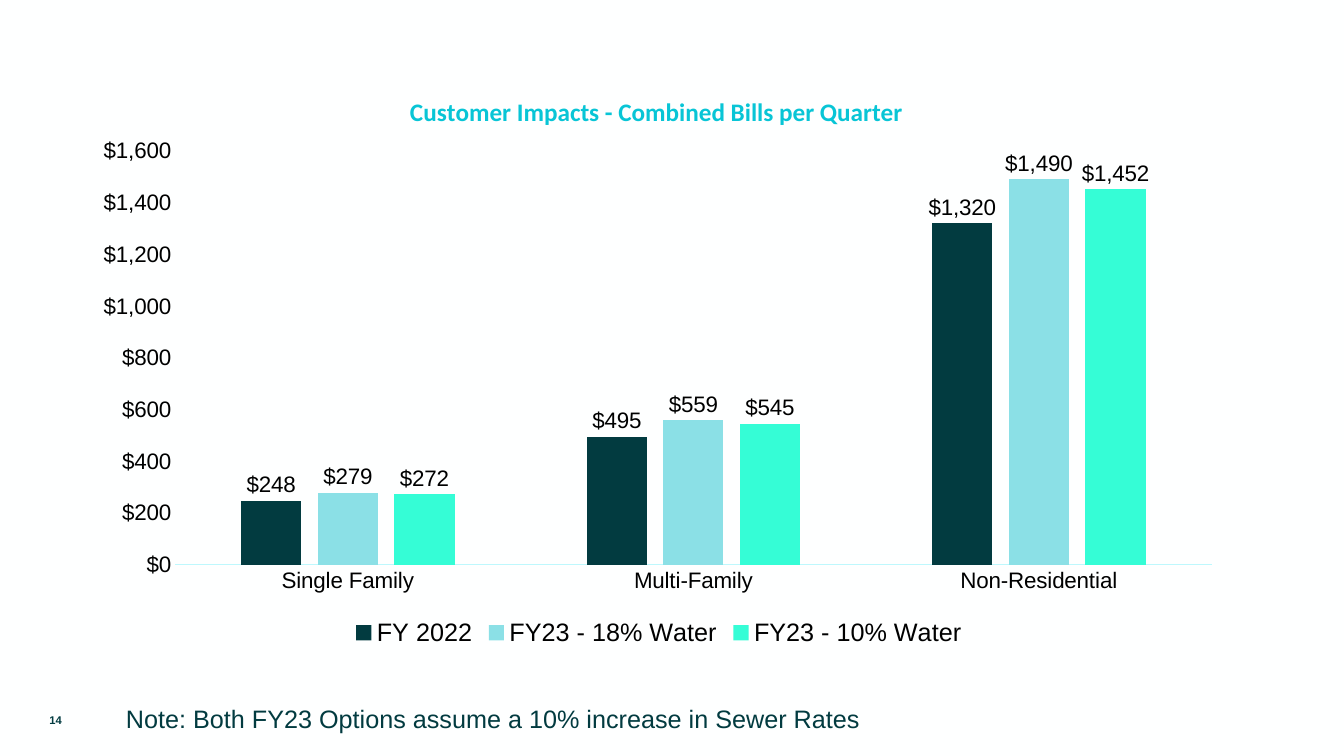
from pptx import Presentation
from pptx.chart.data import CategoryChartData
from pptx.dml.color import RGBColor
from pptx.enum.chart import (XL_CHART_TYPE as Kind, XL_LABEL_POSITION as Spot,
                             XL_LEGEND_POSITION as Side, XL_TICK_MARK as Tick)
from pptx.enum.text import MSO_ANCHOR as Anchor, PP_ALIGN as Align
from pptx.oxml import parse_xml
from pptx.oxml.ns import nsdecls
from pptx.util import Pt

PX = 9525  # 96 px to the inch
DARK, BLACK = "023B40", "000000"
MONEY = '"$"#,##0'
GROUPS = ["Single Family", "Multi-Family", "Non-Residential"]
BILLS = [
    ("FY 2022", (248, 495, 1320), DARK),
    ("FY23 - 18% Water", (279, 559, 1490), "8BE0E6"),
    ("FY23 - 10% Water", (272, 545, 1452), "35FDD6"),
]


def box(*sizes):
    return [size * PX for size in sizes]


def paint(fill, color):
    fill.solid()
    fill.fore_color.rgb = RGBColor.from_string(color)


def style(font, size, color=BLACK, name="Arial", bold=False):
    font.size, font.name, font.bold = Pt(size), name, bold
    font.color.rgb = RGBColor.from_string(color)


def add_text(slide, place, text, size, bold=False):
    frame = slide.shapes.add_textbox(*box(*place)).text_frame
    frame.word_wrap = True
    frame.text = text
    para = frame.paragraphs[0]
    style(para.runs[0].font, size, DARK, bold=bold)
    return frame, para


def layout(x, y, w=None, h=None):
    """Manual chart layout in fractions of the chart area."""
    parts = "".join(f'<c:{key}Mode val="edge"/>' for key in "xy")
    if w:
        parts = '<c:layoutTarget val="inner"/>' + parts
    for key, val in zip("xywh", (x, y, w, h)):
        if val is not None:
            parts += f'<c:{key} val="{val}"/>'
    return parse_xml(f'<c:layout {nsdecls("c")}><c:manualLayout>{parts}'
                     '</c:manualLayout></c:layout>')


def set_layout(node, new):
    for old in node.findall(new.tag):
        node.remove(old)
    node.insert(1 if node.tag.endswith("}title") else 0, new)


def add_title(chart, text):
    frame = chart.chart_title.text_frame
    frame.text = text
    style(frame.paragraphs[0].runs[0].font, 18, "08C5D6", "Calibri", True)
    chart.chart_title.include_in_layout = False
    set_layout(chart._chartSpace.chart.find("{*}title"), layout(0.28, 0.04))


def set_axes(chart):
    cat, val = chart.category_axis, chart.value_axis
    for axis in (cat, val):
        axis.major_tick_mark = axis.minor_tick_mark = Tick.NONE
        axis.has_major_gridlines = False
        style(axis.tick_labels.font, 16)
    paint(cat.format.line.fill, "BEF8FD")
    cat.format.line.width = Pt(0.75)
    val.format.line.fill.background()
    val.minimum_scale, val.maximum_scale, val.major_unit = 0, 1600, 200
    val.tick_labels.number_format = MONEY
    val.tick_labels.number_format_is_linked = False


def set_bars(plot):
    plot.gap_width, plot.overlap, plot.vary_by_categories = 219, -27, False
    for bars, (_, _, color) in zip(plot.series, BILLS):
        paint(bars.format.fill, color)
        bars.invert_if_negative = False
        labels = bars.data_labels
        labels.show_value = True
        labels.position = Spot.OUTSIDE_END
        labels.number_format = MONEY
        labels.number_format_is_linked = False
        style(labels.font, 16)


def add_bills(slide):
    data = CategoryChartData(number_format=MONEY)
    data.categories = GROUPS
    for name, vals, _ in BILLS:
        data.add_series(name, vals)
    chart = slide.shapes.add_chart(
        Kind.COLUMN_CLUSTERED, *box(79, 63, 1097, 558), data).chart
    style(chart.font, 10, DARK)
    add_title(chart, "Customer Impacts - Combined Bills per Quarter")
    set_axes(chart)
    set_bars(chart.plots[0])
    set_layout(chart._chartSpace.chart.plotArea, layout(0.08, 0.145, 0.9, 0.706))
    chart.has_legend = True
    chart.legend.position = Side.BOTTOM
    chart.legend.include_in_layout = False
    style(chart.legend.font, 18)


def main():
    deck = Presentation()
    deck.slide_width, deck.slide_height = box(1280, 720)
    slide = deck.slides.add_slide(deck.slide_layouts[6])
    paint(slide.background.fill, "FEFFFF")

    # Page number
    frame, para = add_text(slide, (0, 667, 106, 38), "14", 8, True)
    frame.vertical_anchor = Anchor.MIDDLE
    para.alignment = Align.CENTER
    para.space_after = Pt(6)

    # Bill chart
    add_bills(slide)

    # Note below the chart
    frame, para = add_text(
        slide, (120, 657, 1056, 41),
        "Note: Both FY23 Options assume a 10% increase in Sewer Rates", 18)
    frame.margin_left, frame.margin_right = box(0, 23)
    frame.margin_top, frame.margin_bottom = box(4, 4)
    para.line_spacing, para.space_before = 1.3, Pt(10)

    deck.save("out.pptx")


if __name__ == "__main__":
    main()
